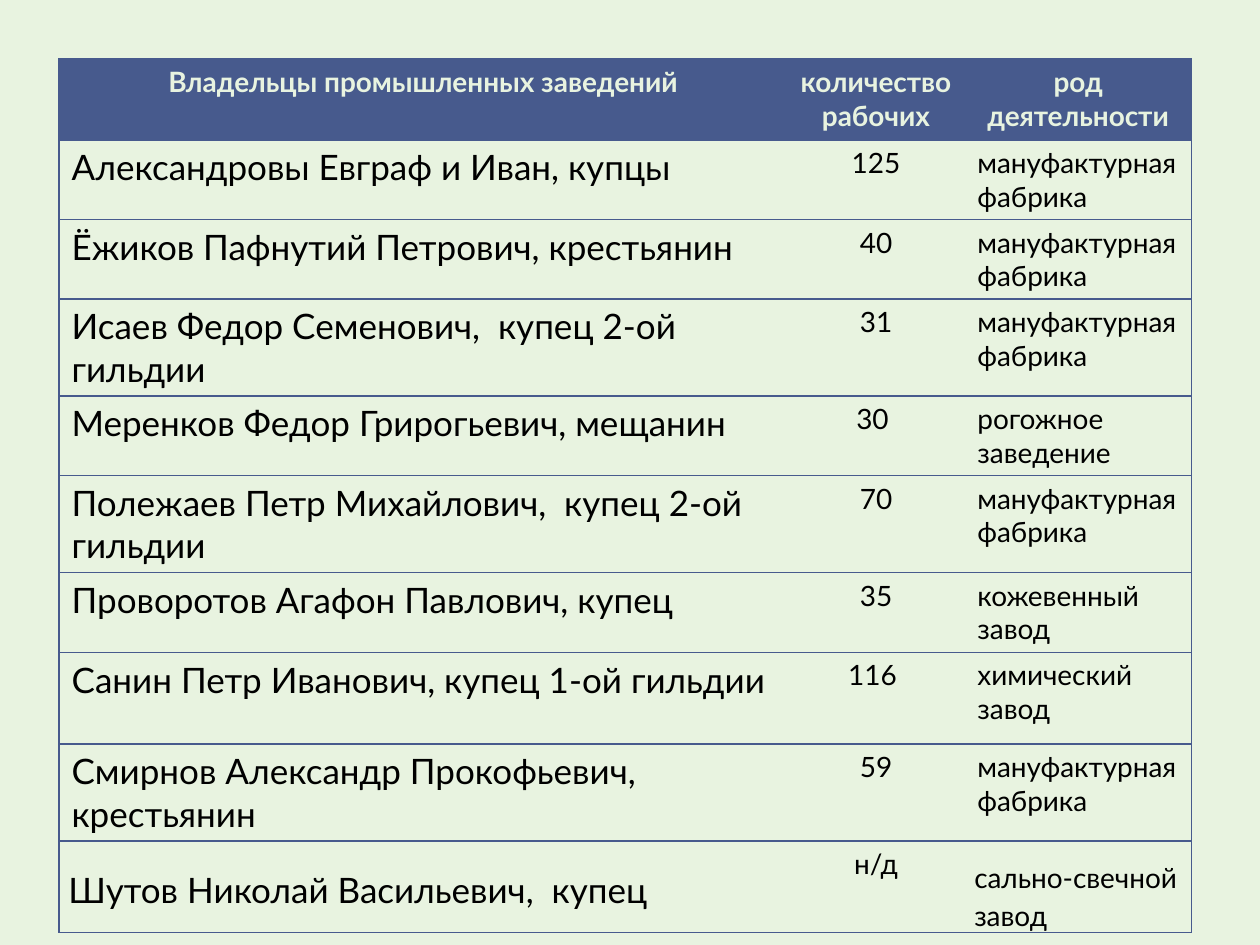
from lxml import etree
from pptx import Presentation
from pptx.dml.color import RGBColor
from pptx.enum.text import MSO_ANCHOR, PP_ALIGN
from pptx.oxml.ns import qn
from pptx.util import Cm, Pt

BACKGROUND = RGBColor(0xE8, 0xF3, 0xE0)
BLUE = RGBColor(0x47, 0x5A, 0x8D)
BLACK = RGBColor(0, 0, 0)
FONT = "Lato"
LEFT, CENTER = PP_ALIGN.LEFT, PP_ALIGN.CENTER
MIDDLE, BOTTOM = MSO_ANCHOR.MIDDLE, MSO_ANCHOR.BOTTOM
NO_STYLE = "{2D5ABB26-0587-4C30-8999-92F81FD0307C}"

TEXTILE = "мануфактурная фабрика"
ROWS = [
    ("Владельцы промышленных заведений", "количество рабочих", "род деятельности"),
    ("Александровы Евграф и Иван, купцы", "125", TEXTILE),
    ("Ёжиков Пафнутий Петрович, крестьянин", "40", TEXTILE),
    ("Исаев Федор Семенович,  купец 2-ой гильдии", "31", TEXTILE),
    ("Меренков Федор Грирогьевич, мещанин", "30 ", "рогожное заведение"),
    ("Полежаев Петр Михайлович,  купец 2-ой гильдии", "70", TEXTILE),
    ("Проворотов Агафон Павлович, купец", "35", "кожевенный завод"),
    ("Санин Петр Иванович, купец 1-ой гильдии", "116 ", "химический завод"),
    ("Смирнов Александр Прокофьевич, крестьянин", "59", TEXTILE),
    ("Шутов Николай Васильевич,  купец", "н/д", "сально-свечной завод"),
]
COLUMN_WIDTHS = [14.68, 3.58, 4.57]
HEADER_HEIGHT, LOW_ROW, HIGH_ROW = 1.63, 1.52, 1.85
ROW_HEIGHTS = [HEADER_HEIGHT, LOW_ROW] + [LOW_ROW, HIGH_ROW] * 4


def add_border(cell, side):
    line = etree.SubElement(cell._tc.get_or_add_tcPr(), qn(f"a:ln{side}"), w=str(Pt(0.79)))
    fill = etree.SubElement(line, qn("a:solidFill"))
    etree.SubElement(fill, qn("a:srgbClr"), val=str(BLUE))


# Slide
presentation = Presentation()
presentation.slide_width = Cm(25.4)
presentation.slide_height = Cm(19.05)
slide = presentation.slides.add_slide(presentation.slide_layouts[6])
slide.background.fill.solid()
slide.background.fill.fore_color.rgb = BACKGROUND

# Table of owners
table_frame = slide.shapes.add_table(
    len(ROWS), len(COLUMN_WIDTHS), Cm(1.19), Cm(1.19),
    Cm(sum(COLUMN_WIDTHS)), Cm(sum(ROW_HEIGHTS)))
table = table_frame.table
table.horz_banding = False
table._tbl.tblPr.find(qn("a:tableStyleId")).text = NO_STYLE
for column, width in zip(table.columns, COLUMN_WIDTHS):
    column.width = Cm(width)
for row, height in zip(table.rows, ROW_HEIGHTS):
    row.height = Cm(height)

# Cells
last_row, last_column = len(ROWS) - 1, len(COLUMN_WIDTHS) - 1
for row_index, texts in enumerate(ROWS):
    is_header = row_index == 0
    for column_index, text in enumerate(texts):
        cell = table.cell(row_index, column_index)
        cell.text = text
        paragraph = cell.text_frame.paragraphs[0]
        paragraph.alignment = CENTER if is_header or column_index == 1 else LEFT
        paragraph.font.name = FONT
        paragraph.font.size = Pt(20 if column_index == 0 and not is_header else 16)
        paragraph.font.bold = is_header
        paragraph.font.color.rgb = BACKGROUND if is_header else BLACK

        # The last row has its own anchors and margins
        if row_index == last_row and column_index != 1:
            paragraph.line_spacing = 1.15
            cell.vertical_anchor = MIDDLE if column_index == 0 else BOTTOM
            cell.margin_left = cell.margin_right = Cm(0.19)
            cell.margin_top = cell.margin_bottom = 0

        # Outer frame and horizontal rules, then the fill
        if column_index == 0:
            add_border(cell, "L")
        if column_index == last_column:
            add_border(cell, "R")
        add_border(cell, "T")
        add_border(cell, "B")
        if is_header:
            cell.fill.solid()
            cell.fill.fore_color.rgb = BLUE
        else:
            cell.fill.background()

presentation.save("out.pptx")
